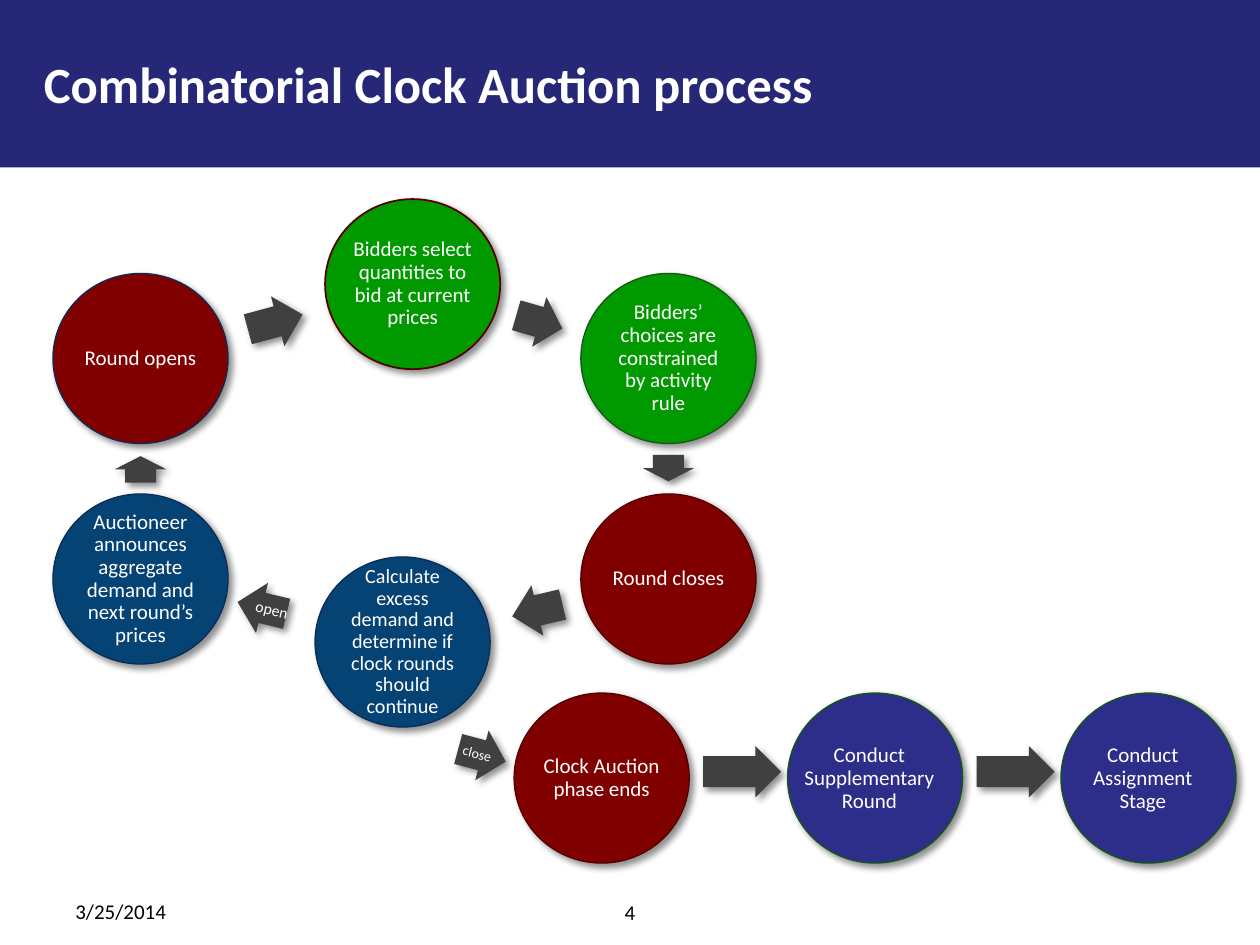
from dataclasses import dataclass
from lxml import etree
from pptx import Presentation, util as u
from pptx.dml.color import RGBColor
from pptx.enum import shapes, text
from pptx.oxml.ns import qn

MSO = shapes.MSO_SHAPE
CENTER, LEFT = text.PP_ALIGN.CENTER, text.PP_ALIGN.LEFT
MIDDLE, TOP = text.MSO_ANCHOR.MIDDLE, text.MSO_ANCHOR.TOP


@dataclass(frozen=True)
class Theme:
    font: str = "Calibri"
    white: str = "FFFFFF"
    black: str = "000000"
    band: str = "272777"
    red: str = "800000"
    dark_red: str = "530000"
    green: str = "009900"
    dark_green: str = "155715"
    blue: str = "054375"
    navy: str = "0A2C57"
    indigo: str = "2D2D8A"
    arrow: str = "404040"
    title_size: float = 29
    body_size: float = 12
    tight_size: float = 11.5
    again_size: float = 9
    done_size: float = 8


class Deck:
    NODE = (1.39, 1.35)
    NODE_INSETS = (0.02,) * 4
    BOX_INSETS = (0.1, 0.05, 0.1, 0.05)

    def __init__(self, theme):
        self.theme = theme
        self.prs = Presentation()
        self.prs.slide_width, self.prs.slide_height = u.Inches(10), u.Inches(7.5)
        self.s = self.prs.slides.add_slide(self.prs.slide_layouts[6])

    def label(self, sp, words, size, color, insets, align=LEFT, anchor=TOP,
              bold=False, wrap=True, spacing=1.0):
        tf = sp.text_frame
        left, top, right, bottom = map(u.Inches, insets)
        frame = {"margin_left": left, "margin_top": top, "margin_right": right,
                 "margin_bottom": bottom, "word_wrap": wrap, "vertical_anchor": anchor}
        p = tf.paragraphs[0]
        r = p.add_run()
        r.text = words
        formats = ((tf, frame),
                   (p, {"alignment": align, "line_spacing": spacing}),
                   (r.font, {"name": self.theme.font, "size": u.Pt(size), "bold": bold}))
        for target, values in formats:
            for name, value in values.items():
                setattr(target, name, value)
        r.font.color.rgb = RGBColor.from_string(color)

    def shape(self, kind, box, fill, line=None, width=0.75):
        sp = self.s.shapes.add_shape(kind, *map(u.Inches, box))
        sp.shadow.inherit = False
        sp.fill.solid()
        sp.fill.fore_color.rgb = RGBColor.from_string(fill)
        if line:
            sp.line.color.rgb = RGBColor.from_string(line)
            sp.line.width = u.Pt(width)
        else:
            sp.line.fill.background()
        return sp

    def cast_shadow(self, sp):
        effects = sp._element.spPr.find(qn("a:effectLst"))
        shadow = etree.SubElement(effects, qn("a:outerShdw"), blurRad=str(u.Pt(4)),
                                  dist=str(u.Pt(3)), dir="2700000", algn="tl",
                                  rotWithShape="0")
        color = etree.SubElement(shadow, qn("a:srgbClr"), val=self.theme.black)
        etree.SubElement(color, qn("a:alpha"), val="43000")

    def text_box(self, box, words, size, color, insets=BOX_INSETS, **layout):
        sp = self.s.shapes.add_textbox(*map(u.Inches, box))
        self.label(sp, words, size, color, insets, **layout)

    def node(self, left, top, words, fill, line, width=0.75, size=None, text_area=None):
        """Draw a step; text_area is an optional separate box for wide words."""
        sp = self.shape(MSO.OVAL, (left, top, *self.NODE), fill, line, width)
        self.cast_shadow(sp)
        style = {"align": CENTER, "anchor": MIDDLE, "spacing": 0.9}
        args = words, size or self.theme.body_size, self.theme.white, self.NODE_INSETS
        if text_area:
            self.text_box(text_area, *args, **style)
        else:
            self.label(sp, *args, **style)

    def arrow(self, kind, box, rotation=0):
        sp = self.shape(kind, box, self.theme.arrow)
        sp.adjustments[0], sp.adjustments[1] = 0.6, 0.5
        sp.rotation = rotation
        self.cast_shadow(sp)
        return sp


def main():
    t = Theme()
    d = Deck(t)

    # Title band
    d.shape(MSO.RECTANGLE, (0, 0, 10, 1.33), t.band)
    d.text_box((0.25, 0.16, 9.58, 1), "Combinatorial Clock Auction process",
               t.title_size, t.white, anchor=MIDDLE, bold=True)

    # Clock round cycle
    left, right, upper, lower = 0.42, 4.61, 2.17, 3.92
    d.node(2.58, 1.58, "Bidders select quantities to bid at current prices",
           t.green, t.dark_red, width=1)
    d.node(right, upper, "Bidders’ choices are constrained by activity rule",
           t.green, t.dark_green)
    d.node(right, lower, "Round closes", t.red, t.dark_red)
    d.node(2.5, 4.42,
           "Calculate excess demand and determine if clock rounds should continue",
           t.blue, t.navy, size=t.tight_size)
    d.node(left, lower, "Auctioneer announces aggregate demand and next round’s prices",
           t.blue, t.navy)
    d.node(left, upper, "Round opens", t.red, t.navy)

    # Arrows around the cycle
    for kind, box, rotation in (
            (MSO.RIGHT_ARROW, (1.96, 2.35, 0.45, 0.41), 344.9),
            (MSO.RIGHT_ARROW, (4.09, 2.35, 0.38, 0.41), 16.1),
            (MSO.RIGHT_ARROW, (5.2, 3.51, 0.21, 0.41), 90),
            (MSO.LEFT_ARROW, (4.06, 4.64, 0.41, 0.41), 346.7),
            (MSO.LEFT_ARROW, (1.01, 3.52, 0.21, 0.41), 90)):
        d.arrow(kind, box, rotation)

    # Outcomes of the excess demand check
    sp = d.arrow(MSO.LEFT_ARROW, (1.88, 4.62, 0.4, 0.41), 13.5)
    d.label(sp, "open", t.again_size, t.white, (0.04, 0, 0, 0), align=CENTER,
            anchor=MIDDLE, wrap=False, spacing=0.9)
    sp = d.arrow(MSO.RIGHT_ARROW, (3.63, 5.79, 0.39, 0.41), 15)
    d.label(sp, "close", t.done_size, t.white, (0.04, 0.05, 0.1, 0.05), wrap=False)

    # Closing stages, evenly spaced
    first, step, top = 4.08, 2.17, 5.5
    d.node(first, top, "Clock Auction phase ends", t.red, t.dark_red)
    for i, words in enumerate(("Conduct Supplementary Round",
                               "Conduct Assignment Stage"), 1):
        x = first + i * step
        d.arrow(MSO.RIGHT_ARROW, (x - 0.67, 5.92, 0.62, 0.41))
        d.node(x, top, words, t.indigo, t.dark_green,
               text_area=(x + 0.11, 5.7, 1.08, 0.96))

    # Footer
    d.text_box((0.5, 7.08, 2.34, 0.27), "3/25/2014", t.body_size, t.black)
    d.text_box((3.83, 7.09, 2.34, 0.26), "4", t.body_size, t.black, align=CENTER)

    d.prs.save("out.pptx")


if __name__ == "__main__":
    main()
